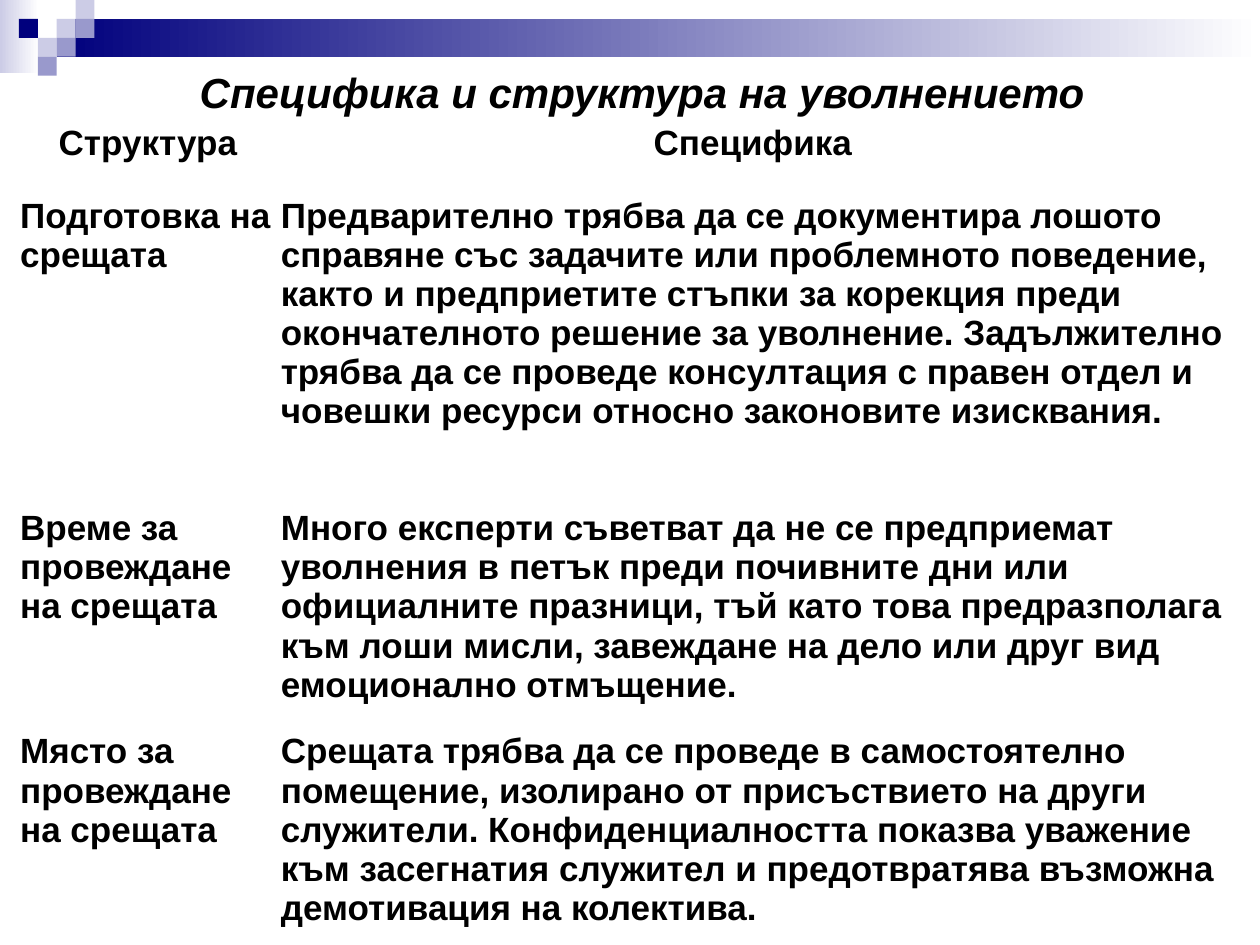
from lxml.etree import SubElement
from pptx import Presentation
from pptx.dml.color import RGBColor
from pptx.enum.shapes import MSO_SHAPE
from pptx.enum.text import MSO_AUTO_SIZE, PP_ALIGN
from pptx.oxml.ns import qn
from pptx.util import Pt

TITLE = "Специфика и структура на уволнението"
ROWS = [
    ("Структура", "Специфика"),
    ("Подготовка на срещата",
     "Предварително трябва да се документира лошото справяне със задачите или "
     "проблемното поведение, както и предприетите стъпки за корекция преди "
     "окончателното решение за уволнение. Задължително трябва да се проведе "
     "консултация с правен отдел и човешки ресурси относно законовите изисквания."),
    ("Време за провеждане на срещата",
     "Много експерти съветват да не се предприемат уволнения в петък преди "
     "почивните дни или официалните празници, тъй като това предразполага към "
     "лоши мисли, завеждане на дело или друг вид емоционално отмъщение."),
    ("Място за провеждане на срещата",
     "Срещата трябва да се проведе в самостоятелно помещение, изолирано от "
     "присъствието на други служители. Конфиденциалността показва уважение към "
     "засегнатия служител и предотвратява възможна демотивация на колектива."),
]
COLUMN_WIDTHS = [149, 542.5]
ROW_HEIGHTS = [42, 178.5, 127.5, 136]
NAVY, VIOLET, LILAC, WHITE, BLACK = "00007D", "9999CC", "CCCCE6", "FFFFFF", "000000"
BANDS = [(0, 0, 22.3, 41.8, LILAC), (32.4, 10.8, 687.6, 21.6, NAVY)]
SQUARE = 10.8
SQUARES = [(3, 1, LILAC), (4, 0, LILAC), (4, 1, VIOLET), (2, 2, LILAC),
           (1, 1, NAVY), (3, 2, VIOLET), (2, 3, VIOLET)]


def color(value):
    return RGBColor.from_string(value)


def add_rectangle(page, left, top, width, height):
    shape = page.shapes.add_shape(
        MSO_SHAPE.RECTANGLE, Pt(left), Pt(top), Pt(width), Pt(height))
    shape.shadow.inherit = False
    shape.line.fill.background()
    return shape


def style_text(paragraph, size):
    paragraph.font.name = "Arial"
    paragraph.font.size = Pt(size)
    paragraph.font.bold = True
    paragraph.font.color.rgb = color(BLACK)


def set_borders(cell, top, bottom):
    properties = cell._tc.get_or_add_tcPr()
    sides = [("a:lnL", 1), ("a:lnR", 1), ("a:lnT", top), ("a:lnB", bottom)]
    for position, (tag, width) in enumerate(sides):
        line = SubElement(properties, qn(tag), w=str(Pt(width)))
        fill = SubElement(line, qn("a:solidFill"))
        SubElement(fill, qn("a:srgbClr"), val=WHITE)
        properties.insert(position, line)


def fill_cell(cell, text, row):
    header = row == 0
    cell.margin_left = cell.margin_right = cell.margin_top = cell.margin_bottom = 0
    cell.fill.solid()
    cell.fill.fore_color.rgb = color(WHITE)
    set_borders(cell, 3 if row in (1, len(ROWS) - 1) else 1,
                3 if row in (0, len(ROWS) - 2) else 1)
    cell.text = text
    paragraph = cell.text_frame.paragraphs[0]
    style_text(paragraph, 20)
    paragraph.alignment = PP_ALIGN.CENTER if header else PP_ALIGN.LEFT
    paragraph.space_before = paragraph.space_after = Pt(1 if header else 2)
    paragraph._p.get_or_add_pPr().set("marL", str(Pt(3)))


def add_table(page):
    frame = page.shapes.add_table(
        len(ROWS), len(COLUMN_WIDTHS), Pt(8.5), Pt(70.5),
        Pt(sum(COLUMN_WIDTHS)), Pt(sum(ROW_HEIGHTS)))
    table = frame.table
    for column, width in zip(table.columns, COLUMN_WIDTHS):
        column.width = Pt(width)
    for index, (height, texts) in enumerate(zip(ROW_HEIGHTS, ROWS)):
        table.rows[index].height = Pt(height)
        for cell, text in zip(table.rows[index].cells, texts):
            fill_cell(cell, text, index)


def add_title(page):
    box = page.shapes.add_textbox(Pt(32.4), Pt(34.5), Pt(669), Pt(36))
    box.text_frame.word_wrap = True
    box.text_frame.auto_size = MSO_AUTO_SIZE.SHAPE_TO_FIT_TEXT
    paragraph = box.text_frame.paragraphs[0]
    paragraph.text = TITLE
    paragraph.alignment = PP_ALIGN.CENTER
    style_text(paragraph, 24)
    paragraph.font.italic = True


def main():
    deck = Presentation()
    deck.slide_width, deck.slide_height = Pt(720), Pt(540)
    page = deck.slides.add_slide(deck.slide_layouts[6])
    for left, top, width, height, start in BANDS:
        band = add_rectangle(page, left, top, width, height)
        band.fill.gradient()
        band.fill.gradient_angle = 0
        for stop, value in zip(band.fill.gradient_stops, (start, WHITE)):
            stop.color.rgb = color(value)
    for column, row, value in SQUARES:
        square = add_rectangle(page, column * SQUARE, row * SQUARE, SQUARE, SQUARE)
        square.fill.solid()
        square.fill.fore_color.rgb = color(value)
    add_table(page)
    add_title(page)
    deck.save("out.pptx")


if __name__ == "__main__":
    main()
